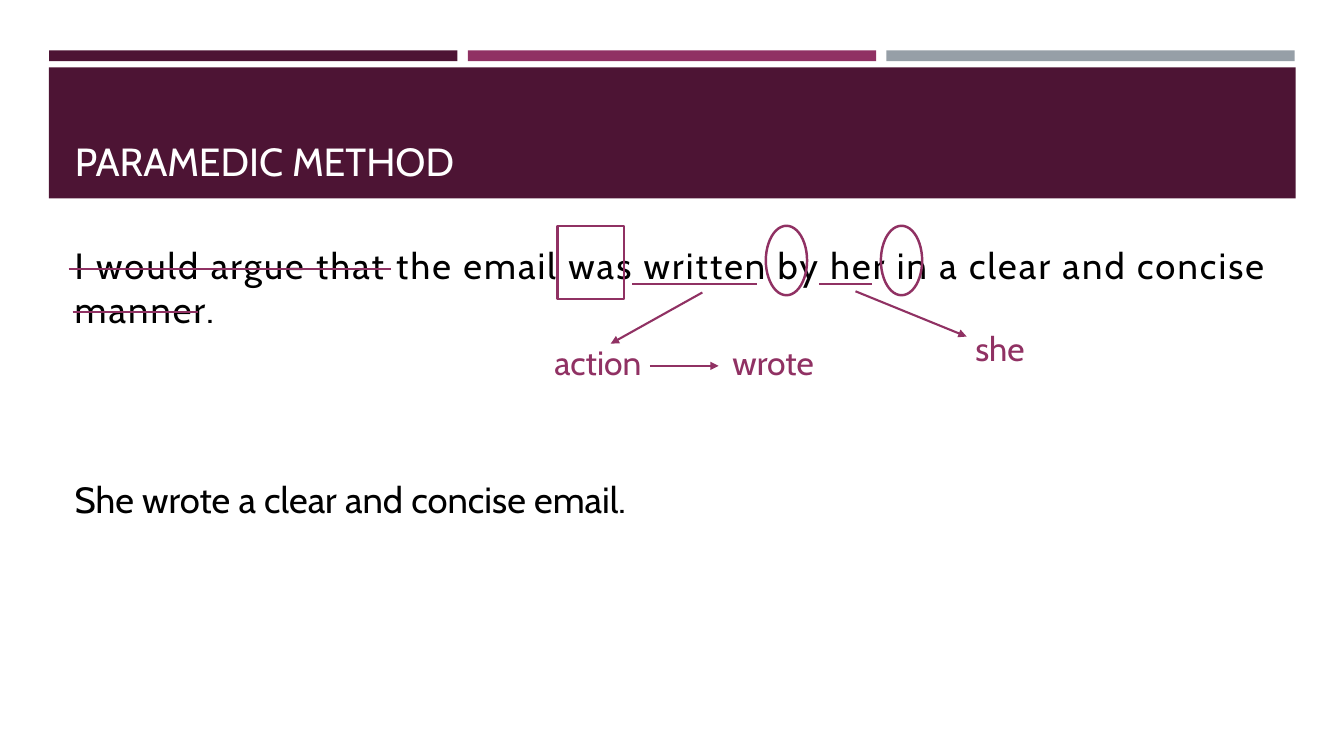
import pptx
import pptx.util
import pptx.dml.color
import pptx.enum.shapes
import pptx.enum.text
import lxml.etree

Cm, Pt = pptx.util.Cm, pptx.util.Pt
KIND = pptx.enum.shapes.MSO_SHAPE
ANCHOR = pptx.enum.text.MSO_ANCHOR
NS = "{http://schemas.openxmlformats.org/drawingml/2006/main}"

# Content; all lengths in cm
HUES = {"plum": "4D1434", "rose": "903163", "grey": "969FA7",
        "white": "FFFFFF", "black": "000000"}
TITLE = "PARAMEDIC METHOD"
BEFORE = ("I would argue that the email was written by her "
          "in a clear and concise manner.")
AFTER = "She wrote a clear and concise email."
BARS = ["plum", "rose", "grey"]
BAND = (1.23, 1.7, 31.42, 3.3)
HEAD = (1.63, 1.96, 30.63, 2.82)
BODY = (1.63, 6, 30.63, 10.2)
MARKS = [  # shapes around single words
    (KIND.RECTANGLE, (14.05, 5.69, 1.68, 1.85)),
    (KIND.OVAL, (19.3, 5.69, 1.04, 1.75)),
    (KIND.OVAL, (22.2, 5.69, 1.04, 1.75)),
]
NOTES = [("action", 13.72, 8.48), ("wrote", 18.21, 8.48), ("she", 24.33, 8.13)]
RULES = [  # left, right, height: two strikes, two underlines
    (1.73, 9.86, 6.78), (1.83, 4.98, 7.87),
    (15.93, 19.08, 7.16), (20.65, 21.97, 7.16),
]
ARROWS = [
    (17.7, 7.37, 15.39, 8.66),   # written to action
    (16.38, 9.22, 18.11, 9.22),  # action to wrote
    (21.56, 7.34, 24.36, 8.48),  # her to she
]


def hue(name):
    return pptx.dml.color.RGBColor.from_string(HUES[name])


def style(item, **look):
    for key, value in look.items():
        setattr(item, key, value)


def write(para, text, size, color):
    run = para.add_run()
    run.text = text
    style(run.font, name="Cabin", size=Pt(size))
    run.font.color.rgb = hue(color)
    return run


def shape(kind, box, fill=None):
    item = slide.shapes.add_shape(kind, *map(Cm, box))
    item.shadow.inherit = False
    if fill:
        item.fill.solid()
        item.fill.fore_color.rgb = hue(fill)
        item.line.fill.background()
    else:
        item.fill.background()
        item.line.color.rgb = hue("rose")
        item.line.width = Pt(1.75)


def line(*ends, arrow=False):
    item = slide.shapes.add_connector(
        pptx.enum.shapes.MSO_CONNECTOR.STRAIGHT, *map(Cm, ends))
    item.line.color.rgb = hue("rose")
    item.line.width = Pt(1.5)
    props = item.element.spPr
    if arrow:
        edge = props.find(NS + "ln")
        lxml.etree.SubElement(edge, NS + "tailEnd", type="triangle")
    lxml.etree.SubElement(props, NS + "effectLst")


def box(*place):
    frame = slide.shapes.add_textbox(*map(Cm, place)).text_frame
    frame.word_wrap = True
    return frame


deck = pptx.Presentation()
style(deck, slide_width=Cm(33.87), slide_height=Cm(19.05))
slide = deck.slides.add_slide(deck.slide_layouts[5])

# Top bars and title band
for i, color in enumerate(BARS):
    shape(KIND.RECTANGLE, (1.24 + i * 10.55, 1.27, 10.29, 0.27), color)
shape(KIND.RECTANGLE, BAND, "plum")

# Title, brought in front of the band
title = slide.shapes.title
style(title, **dict(zip(("left", "top", "width", "height"), map(Cm, HEAD))))
style(title.text_frame, vertical_anchor=ANCHOR.BOTTOM,
      auto_size=pptx.enum.text.MSO_AUTO_SIZE.NONE)
para = title.text_frame.paragraphs[0]
para.alignment = pptx.enum.text.PP_ALIGN.LEFT
write(para, TITLE, 28, "white")
title.element.getparent().append(title.element)

# Wordy sentence, then the revised one
frame = box(*BODY)
run = write(frame.paragraphs[0], BEFORE, 26, "black")
run.font._element.set("spc", "150")
para = frame.add_paragraph()
para.space_before = Cm(3.7)
write(para, AFTER, 26, "black")

# Editing marks and notes
for kind, place in MARKS:
    shape(kind, place)
for word, x, y in NOTES:
    write(box(x, y, 7.6, 1.28).paragraphs[0], word, 24, "rose")
for left, right, y in RULES:
    line(left, y, right, y)
for ends in ARROWS:
    line(*ends, arrow=True)

deck.save("out.pptx")
